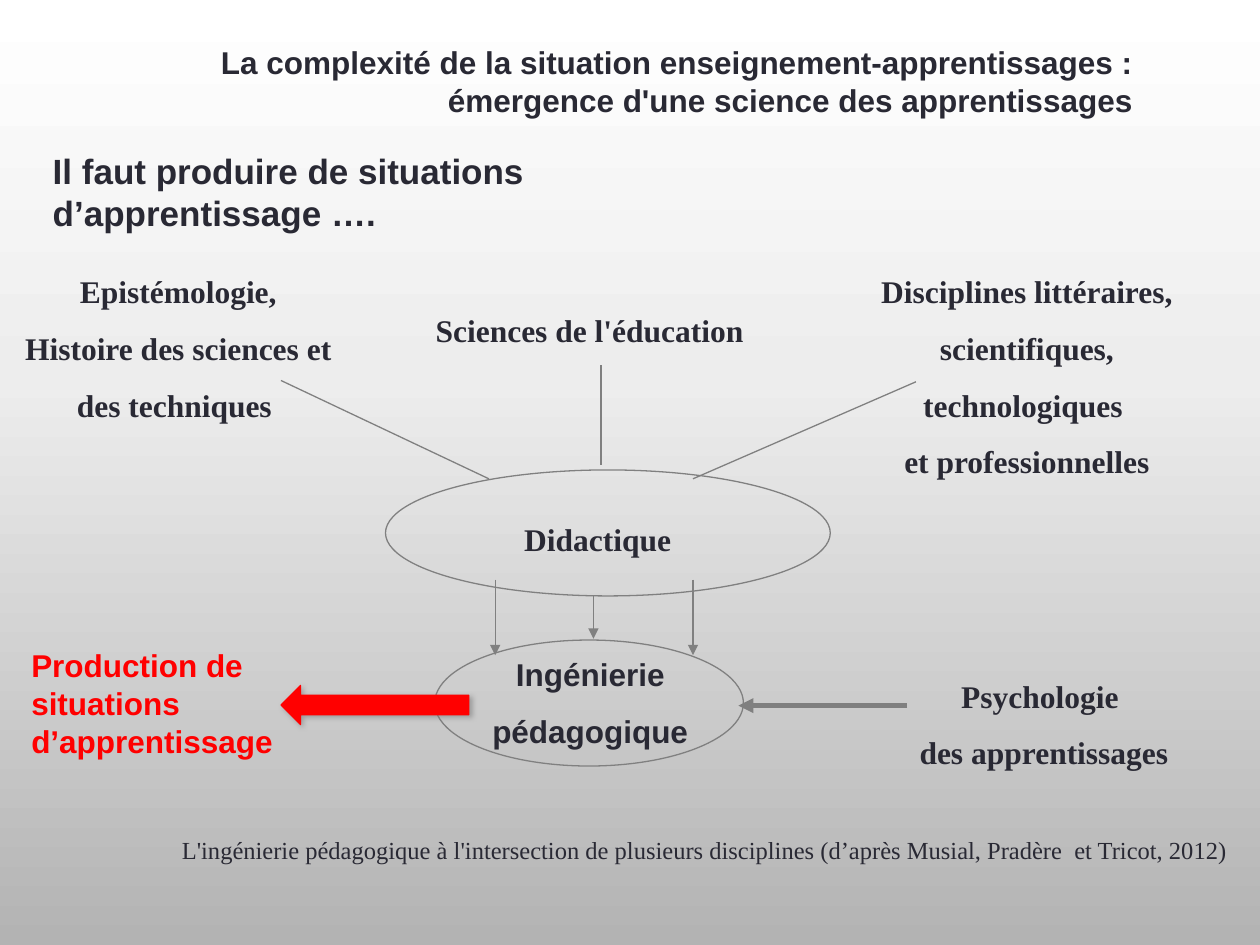
"""Build the slide on the sciences that feed teaching design."""
from copy import deepcopy
from dataclasses import dataclass

from lxml.etree import SubElement
from pptx import Presentation
from pptx.dml.color import RGBColor
from pptx.enum.shapes import MSO_CONNECTOR, MSO_SHAPE
from pptx.enum.text import PP_ALIGN
from pptx.oxml.ns import qn
from pptx.util import Inches, Pt

INK, GREY, RED = "292934", "808080", "FF0000"
SANS, SERIF = "Arial", "Times New Roman"
LEFT, MID, RIGHT, FULL = PP_ALIGN.LEFT, PP_ALIGN.CENTER, PP_ALIGN.RIGHT, PP_ALIGN.JUSTIFY


@dataclass
class Label:
    """A text box: place, paragraphs and type."""
    box: tuple[float, float, float, float]
    lines: list[str]
    font: str = SERIF
    size: int = 18
    bold: bool = True
    ink: str = INK
    align: PP_ALIGN = MID
    gap: float = 1.5
    pad: tuple[float, float] = (0, 0)
    hang: float = 0


@dataclass
class Link:
    """A straight line from start to end, with or without a head."""
    start: tuple[float, float]
    end: tuple[float, float]
    head: bool = False
    width: float = 0.75


def paint(color, code: str) -> None:
    """Set a colour from a hex string."""
    color.rgb = RGBColor.from_string(code)


def shade(slide, stops: list[tuple[float, str]]) -> None:
    """Fill the background with a gradient from top to bottom."""
    fill = slide.background.fill
    fill.gradient()
    fill.gradient_angle = 270
    group = slide.element.find(".//" + qn("a:gsLst"))
    while len(group) < len(stops):
        group.append(deepcopy(group[0]))
    for stop, (place, code) in zip(fill.gradient_stops, stops):
        stop.position = place
        paint(stop.color, code)


def write(slide, label: Label) -> None:
    """Add a text box with its paragraphs."""
    frame = slide.shapes.add_textbox(*map(Inches, label.box)).text_frame
    frame.word_wrap = True
    frame.margin_left = frame.margin_right = Inches(label.pad[0])
    frame.margin_top = frame.margin_bottom = Inches(label.pad[1])
    for i, line in enumerate(label.lines):
        para = frame.add_paragraph() if i else frame.paragraphs[0]
        para.alignment, para.line_spacing = label.align, label.gap
        if label.hang:
            props = para._p.get_or_add_pPr()
            props.set("marL", str(Inches(label.hang)))
            props.set("indent", str(-Inches(label.hang)))
        run = para.add_run()
        run.text = line
        font = run.font
        font.name, font.size, font.bold = label.font, Pt(label.size), label.bold
        paint(font.color, label.ink)


def outline(slide, kind: MSO_SHAPE, box: tuple, code: str):
    """Add an unfilled shape with a thin line."""
    shape = slide.shapes.add_shape(kind, *map(Inches, box))
    shape.shadow.inherit = False
    shape.fill.background()
    shape.line.width = Pt(0.75)
    paint(shape.line.color, code)
    return shape


def arrow(slide, box: tuple) -> None:
    """Add the red block arrow with its soft shadow."""
    shape = outline(slide, MSO_SHAPE.LEFT_ARROW, box, RED)
    shape.fill.solid()
    paint(shape.fill.fore_color, RED)
    effects = shape._element.spPr.find(qn("a:effectLst"))
    shadow = SubElement(effects, qn("a:outerShdw"), blurRad=str(Pt(3)),
                        dist=str(Pt(2)), dir="2700000", rotWithShape="0")
    tint = SubElement(shadow, qn("a:srgbClr"), val=GREY)
    SubElement(tint, qn("a:alpha"), val="60000")


def join(slide, link: Link) -> None:
    """Add a grey connector."""
    line = slide.shapes.add_connector(
        MSO_CONNECTOR.STRAIGHT, *map(Inches, link.start + link.end))
    line.line.width = Pt(link.width)
    paint(line.line.color, GREY)
    if link.head:
        SubElement(line.line._get_or_add_ln(), qn("a:tailEnd"), type="triangle")
    SubElement(line._element.spPr, qn("a:effectLst"))


OVALS = [(3.06, 3.73, 3.53, 1), (3.45, 5.08, 2.45, 1)]

LINKS = [
    Link((2.23, 3.02), (3.88, 3.8)),
    Link((7.27, 3.03), (5.5, 3.8)),
    Link((4.77, 2.9), (4.77, 3.69)),
    Link((3.93, 4.6), (3.93, 5.2), True),
    Link((5.5, 4.6), (5.5, 5.2), True),
    Link((4.71, 4.73), (4.71, 5.07), True),
    Link((7.2, 5.6), (5.86, 5.6), True, 2.86),
]

LABELS = [
    Label((0.46, 0.29, 8.63, 0.71),
          ["La complexité de la situation enseignement-apprentissages : "
           "émergence d'une science des apprentissages"],
          SANS, align=RIGHT, gap=1, pad=(0.1, 0.05), hang=0.2),
    Label((4.16, 3.98, 1.69, 0.34), ["Didactique"], align=FULL),
    Label((0.19, 2.01, 2.45, 1.49),
          ["Epistémologie,", "Histoire des sciences et des techniques "]),
    Label((3.38, 2.32, 2.6, 0.4), ["Sciences de l'éducation"]),
    Label((6.59, 2.01, 3.12, 1.98),
          ["Disciplines littéraires, scientifiques,", "technologiques ",
           "et professionnelles"]),
    Label((3.57, 5.05, 2.23, 0.43), ["Ingénierie pédagogique"], SANS),
    Label((7.13, 5.22, 2.31, 1.01), ["Psychologie ", "des apprentissages"]),
    Label((0.61, 6.51, 9.14, 0.36),
          ["L'ingénierie pédagogique à l'intersection de plusieurs disciplines "
           "(d’après Musial, Pradère  et Tricot, 2012)"],
          size=14, bold=False, align=RIGHT),
    Label((0.15, 5.08, 2.77, 0.71),
          ["Production de situations", "d’apprentissage"],
          SANS, ink=RED, align=LEFT, gap=1, pad=(0.1, 0.05)),
    Label((0.32, 1.14, 5.78, 0.44),
          ["Il faut produire de situations d’apprentissage …."],
          SANS, 20, align=LEFT, gap=1, pad=(0.1, 0.05)),
]


def main() -> None:
    """Build and save the deck."""
    deck = Presentation()
    deck.slide_width, deck.slide_height = Inches(10), Inches(7.5)
    slide = deck.slides.add_slide(deck.slide_layouts[6])
    shade(slide, [(0, "FFFFFF"), (0.4, "EDEDED"), (1, "B3B3B3")])
    for box in OVALS:
        outline(slide, MSO_SHAPE.OVAL, box, GREY)
    for link in LINKS:
        join(slide, link)
    arrow(slide, (2.23, 5.44, 1.49, 0.31))
    for label in LABELS:
        write(slide, label)
    deck.save("out.pptx")


if __name__ == "__main__":
    main()
